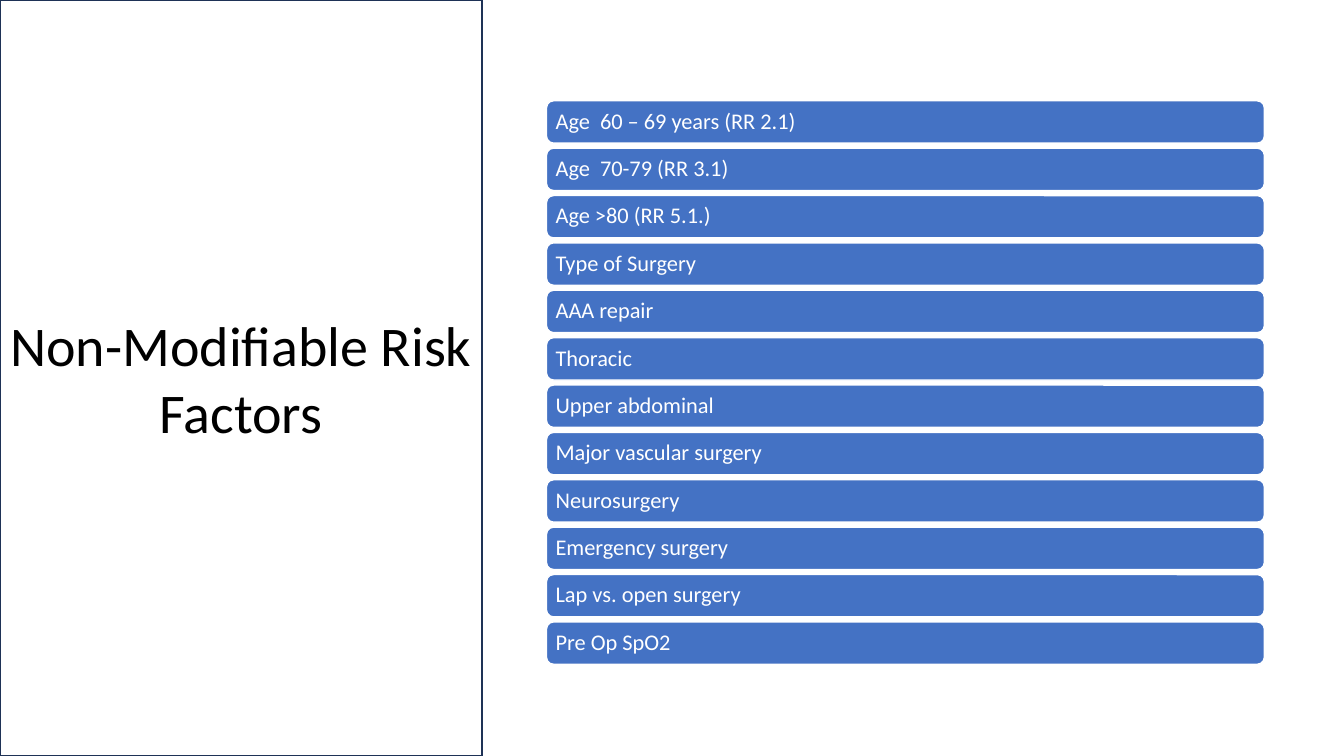
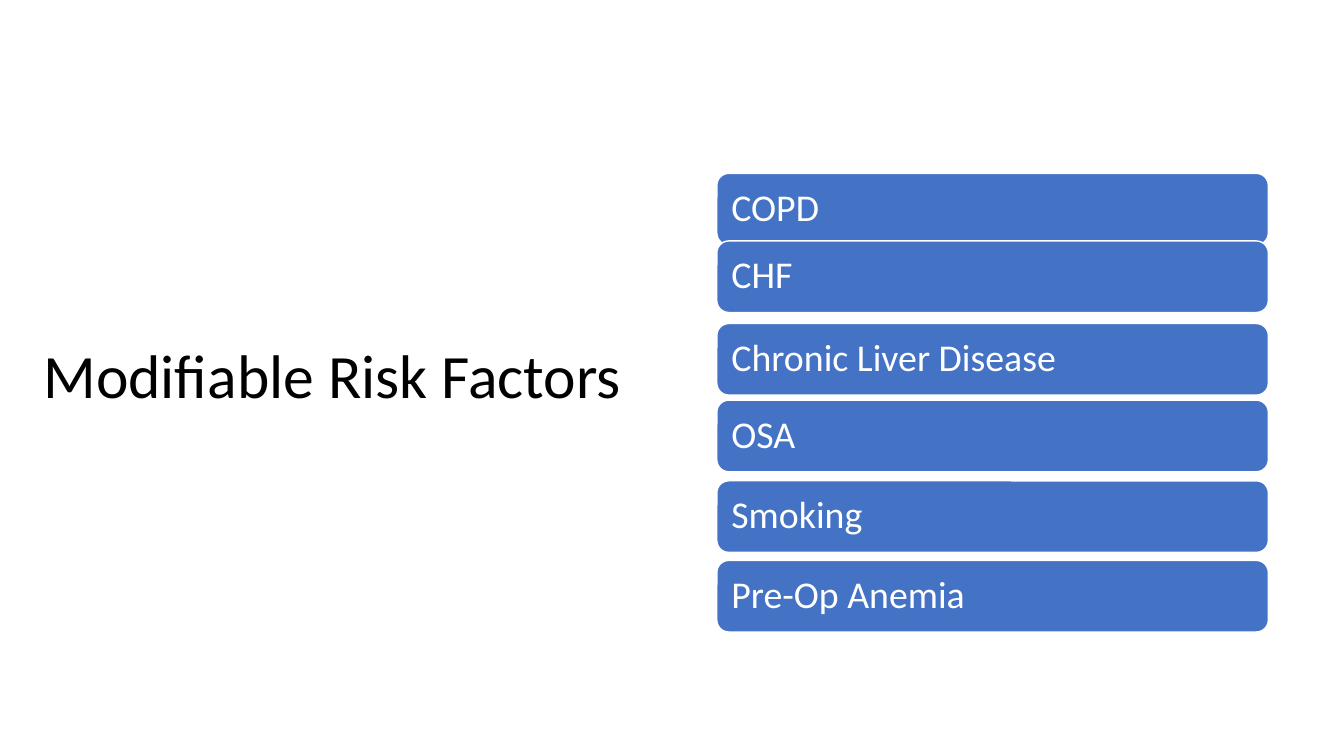
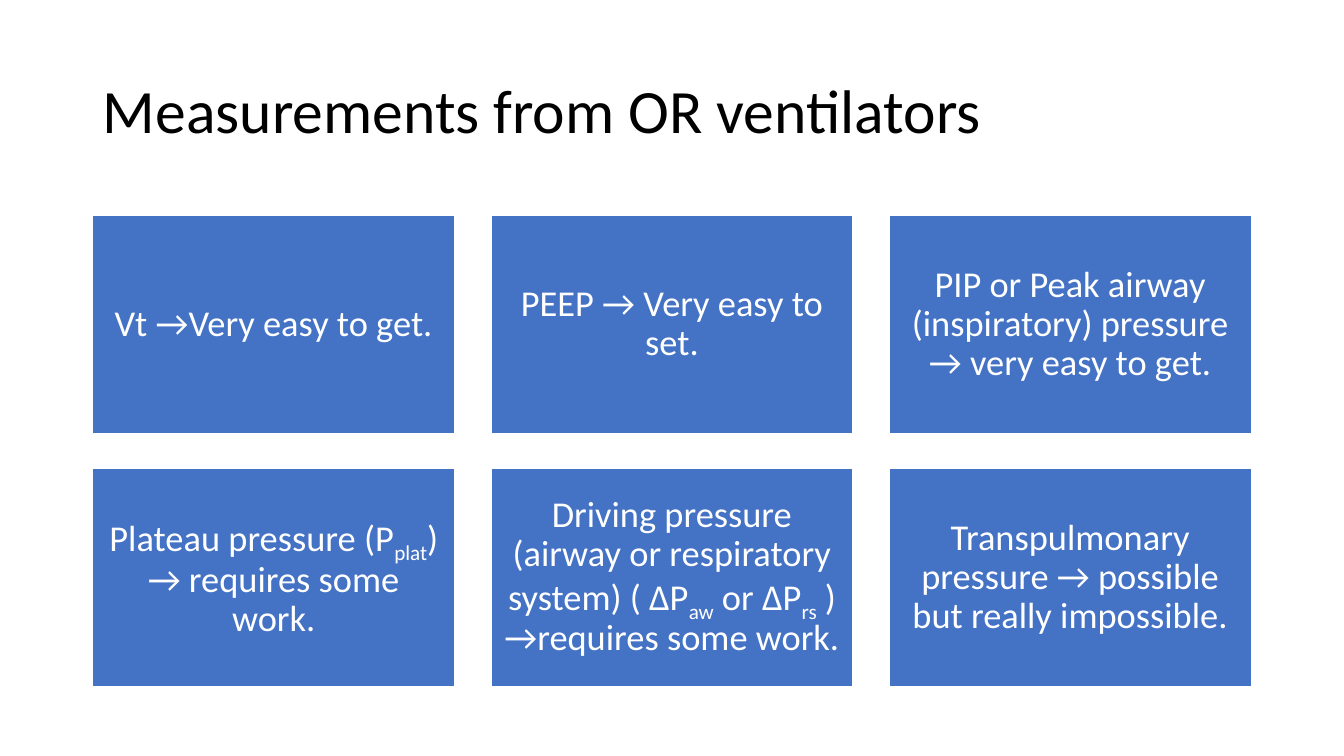
from pptx import Presentation
from pptx.dml.color import RGBColor
from pptx.enum import shapes, text
from pptx.util import Inches, Pt

BLUE = RGBColor(0x44, 0x72, 0xC4)
NAVY = RGBColor(0x1E, 0x32, 0x56)
WHITE = RGBColor(0xFF, 0xFF, 0xFF)
BLACK = RGBColor(0x00, 0x00, 0x00)
FONT = "Calibri"
SUBSCRIPT = "-25000"

FIXED_FACTORS = [
    "Age  60 – 69 years (RR 2.1)", "Age  70-79 (RR 3.1)", "Age >80 (RR 5.1.)",
    "Type of Surgery", "AAA repair", "Thoracic", "Upper abdominal",
    "Major vascular surgery", "Neurosurgery", "Emergency surgery",
    "Lap vs. open surgery", "Pre Op SpO2",
]
MODIFIABLE_FACTORS = [
    ("COPD", 1.72), ("CHF", 2.39), ("Chronic Liver Disease", 3.21),
    ("OSA", 3.97), ("Smoking", 4.77), ("Pre-Op Anemia", 5.56),
]
# Text between bars is set as subscript.
MEASUREMENTS = [
    "Vt →Very easy to get.",
    "PEEP → Very easy to set.",
    "PIP or Peak airway (inspiratory) pressure → very easy to get.",
    "Plateau pressure (P|plat|) → requires some work.",
    "Driving pressure (airway or respiratory system) ( ΔP|aw| or ΔP|rs| ) →requires some work.",
    "Transpulmonary pressure → possible but really impossible.",
]


def write(box, wording, size, color, align, spacing=0.9):
    """Fill a shape with one paragraph; odd parts between bars are subscripts."""
    frame = box.text_frame
    frame.word_wrap = True
    frame.auto_size = text.MSO_AUTO_SIZE.NONE
    frame.vertical_anchor = text.MSO_ANCHOR.MIDDLE
    para = frame.paragraphs[0]
    para.alignment = align
    para.line_spacing = spacing
    for index, part in enumerate(wording.split("|")):
        span = para.add_run()
        span.text = part
        span.font.name = FONT
        span.font.size = Pt(size)
        span.font.color.rgb = color
        if index % 2:
            span._r.get_or_add_rPr().set("baseline", SUBSCRIPT)


def add_titled_page(deck, wording, place, size=44, align=text.PP_ALIGN.LEFT, spacing=0.9):
    page = deck.slides.add_slide(deck.slide_layouts[5])
    title = page.shapes.title
    title.left, title.top, title.width, title.height = map(Inches, place)
    write(title, wording, size, BLACK, align, spacing)
    return page


def add_panel(page, kind, place, wording, size, inset, align):
    panel = page.shapes.add_shape(kind, *map(Inches, place))
    panel.shadow.inherit = False
    panel.fill.solid()
    panel.fill.fore_color.rgb = BLUE
    panel.line.color.rgb = WHITE
    panel.line.width = Pt(1)
    frame = panel.text_frame
    frame.margin_left = frame.margin_right = Inches(inset)
    frame.margin_top = frame.margin_bottom = Inches(inset)
    write(panel, wording, size, WHITE, align)


def add_bar(page, place, wording, size, inset):
    add_panel(page, shapes.MSO_SHAPE.ROUNDED_RECTANGLE, place, wording, size,
              inset, text.PP_ALIGN.LEFT)


def add_fixed_factors(deck):
    page = add_titled_page(deck, "Non-Modifiable Risk Factors", (0, 0, 4.78, 7.5),
                           size=40, align=text.PP_ALIGN.CENTER, spacing=1.0)
    border = page.shapes.title.line
    border.color.rgb = NAVY
    border.width = Pt(1)
    for row, factor in enumerate(FIXED_FACTORS):
        add_bar(page, (5.42, 1 + 0.47 * row, 7.12, 0.42), factor, 16, 0.07)


def add_modifiable_factors(deck):
    page = add_titled_page(deck, "Modifiable Risk Factors", (0.33, 3.03, 6.23, 1.45))
    for factor, top in MODIFIABLE_FACTORS:
        add_bar(page, (7.11, top, 5.47, 0.71), factor, 27, 0.11)


def add_measurements(deck):
    page = add_titled_page(deck, "Measurements from OR ventilators", (0.92, 0.4, 11.5, 1.45))
    for index, measurement in enumerate(MEASUREMENTS):
        row, column = divmod(index, 3)
        place = (0.92 + 3.95 * column, 2.14 + 2.51 * row, 3.59, 2.16)
        add_panel(page, shapes.MSO_SHAPE.RECTANGLE, place, measurement, 26, 0.11,
                  text.PP_ALIGN.CENTER)


def main():
    deck = Presentation()
    deck.slide_width, deck.slide_height = Inches(13.33), Inches(7.5)
    add_fixed_factors(deck)
    add_modifiable_factors(deck)
    add_measurements(deck)
    deck.save("out.pptx")


if __name__ == "__main__":
    main()
